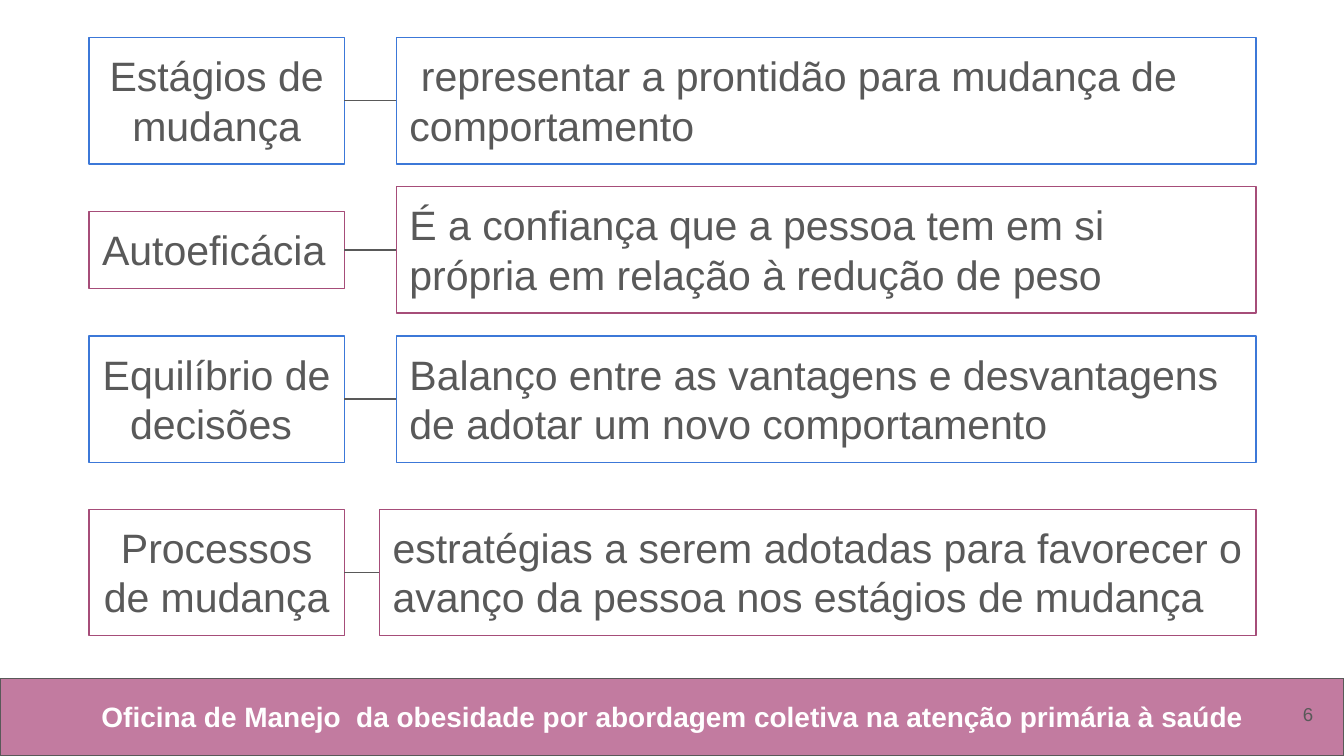
from dataclasses import dataclass

from pptx import Presentation
from pptx.dml.color import RGBColor
from pptx.enum.shapes import MSO_CONNECTOR, MSO_SHAPE
from pptx.enum.text import MSO_ANCHOR, PP_ALIGN
from pptx.oxml.ns import qn
from pptx.shapes.autoshape import Shape
from pptx.slide import Slide
from pptx.util import Cm, Pt

BLUE = RGBColor(0x3C, 0x78, 0xD8)
PLUM = RGBColor(0xA6, 0x4D, 0x79)
PINK = RGBColor(0xC2, 0x7B, 0xA0)
GRAY = RGBColor(0x59, 0x59, 0x59)
WHITE = RGBColor(0xFF, 0xFF, 0xFF)

# Lengths in centimetres
SLIDE_WIDTH, SLIDE_HEIGHT = 25.4, 14.29
TERM_LEFT, TERM_WIDTH = 1.68, 4.83
TERM_RIGHT = TERM_LEFT + TERM_WIDTH
MEANING_RIGHT = 23.74
ROW_TOP, ROW_PITCH, ROW_HEIGHT = 0.71, 2.82, 2.39
INSET = 0.25
FOOTER_TOP = 12.83


@dataclass
class Concept:
    term: str
    meaning: str
    color: RGBColor
    top: float
    meaning_left: float = 7.49
    term_height: float = ROW_HEIGHT
    term_alignment: PP_ALIGN = PP_ALIGN.CENTER


CONCEPTS = [
    Concept("Estágios de mudança",
            " representar a prontidão para mudança de comportamento",
            BLUE, ROW_TOP),
    Concept("Autoeficácia",
            "É a confiança que a pessoa tem em si própria em relação à redução de peso",
            PLUM, ROW_TOP + ROW_PITCH, term_height=1.45, term_alignment=PP_ALIGN.LEFT),
    Concept("Equilíbrio de decisões ",
            "Balanço entre as vantagens e desvantagens de adotar um novo comportamento",
            BLUE, ROW_TOP + 2 * ROW_PITCH),
    Concept("Processos de mudança",
            "estratégias a serem adotadas para favorecer o avanço da pessoa "
            "nos estágios de mudança",
            PLUM, 9.63, meaning_left=7.17),
]


def write_text(shape: Shape, text: str, size: float, color: RGBColor,
               alignment: PP_ALIGN, anchor: MSO_ANCHOR = MSO_ANCHOR.TOP,
               bold: bool = False) -> None:
    frame = shape.text_frame
    frame.word_wrap = True
    frame.vertical_anchor = anchor
    frame.margin_left = frame.margin_right = Cm(INSET)
    frame.margin_top = frame.margin_bottom = Cm(INSET)
    paragraph = frame.paragraphs[0]
    paragraph.text = text
    paragraph.alignment = alignment
    paragraph.font.name = "Arial"
    paragraph.font.size = Pt(size)
    paragraph.font.bold = bold
    paragraph.font.color.rgb = color


def add_box(slide: Slide, left: float, top: float, width: float, height: float,
            line_color: RGBColor) -> Shape:
    box = slide.shapes.add_shape(MSO_SHAPE.RECTANGLE, Cm(left), Cm(top),
                                 Cm(width), Cm(height))
    box.shadow.inherit = False
    box.fill.background()
    box.line.color.rgb = line_color
    box.line.width = Pt(0.75)
    return box


def add_link(slide: Slide, start: float, end: float, y: float) -> None:
    link = slide.shapes.add_connector(MSO_CONNECTOR.STRAIGHT, Cm(start), Cm(y),
                                      Cm(end), Cm(y))
    link.line.color.rgb = GRAY
    link.line.width = Pt(0.75)
    properties = link._element.spPr
    properties.append(properties.makeelement(qn("a:effectLst"), {}))


def add_concept(slide: Slide, concept: Concept) -> None:
    middle = concept.top + ROW_HEIGHT / 2
    term = add_box(slide, TERM_LEFT, middle - concept.term_height / 2,
                   TERM_WIDTH, concept.term_height, concept.color)
    write_text(term, concept.term, 22, GRAY, concept.term_alignment)
    meaning = add_box(slide, concept.meaning_left, concept.top,
                      MEANING_RIGHT - concept.meaning_left, ROW_HEIGHT, concept.color)
    write_text(meaning, concept.meaning, 22, GRAY, PP_ALIGN.LEFT)
    add_link(slide, TERM_RIGHT, concept.meaning_left, middle)


def add_footer(slide: Slide) -> None:
    band = add_box(slide, 0, FOOTER_TOP, SLIDE_WIDTH, SLIDE_HEIGHT - FOOTER_TOP, GRAY)
    band.fill.solid()
    band.fill.fore_color.rgb = PINK
    caption = slide.shapes.add_textbox(Cm(0.86), Cm(12.98), Cm(23.7), Cm(1.14))
    write_text(caption,
               "Oficina de Manejo  da obesidade por abordagem coletiva "
               "na atenção primária à saúde",
               15, WHITE, PP_ALIGN.CENTER, bold=True)
    number = slide.shapes.add_textbox(Cm(23.55), Cm(12.95), Cm(1.52), Cm(1.09))
    write_text(number, "6", 10, GRAY, PP_ALIGN.RIGHT, MSO_ANCHOR.MIDDLE)


def main() -> None:
    presentation = Presentation()
    presentation.slide_width = Cm(SLIDE_WIDTH)
    presentation.slide_height = Cm(SLIDE_HEIGHT)
    # The slide has no title or list, so it uses the blank layout
    slide = presentation.slides.add_slide(presentation.slide_layouts[6])
    add_footer(slide)
    for concept in CONCEPTS:
        add_concept(slide, concept)
    presentation.save("out.pptx")


if __name__ == "__main__":
    main()
